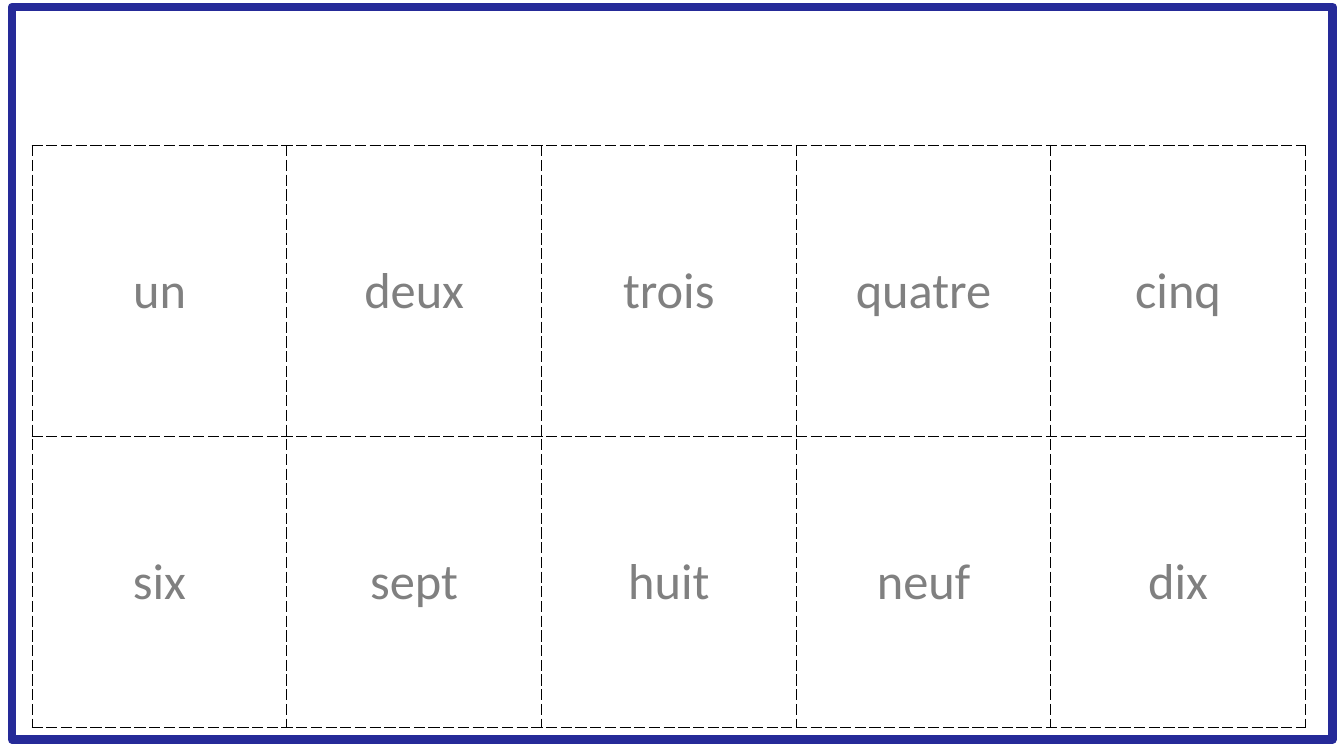
from dataclasses import dataclass

from lxml.etree import SubElement
from pptx import Presentation
from pptx.dml.color import RGBColor
from pptx.enum.shapes import MSO_SHAPE
from pptx.enum.text import MSO_ANCHOR, PP_ALIGN
from pptx.oxml.ns import qn
from pptx.util import Pt


@dataclass(frozen=True)
class Theme:
    font: str = "Calibri"
    size: float = 36
    ink: str = "808080"
    frame: str = "252A98"
    rule: str = "000000"


class Board:
    """Draws styled elements on one slide."""

    def __init__(self, slide, theme):
        self.slide = slide
        self.theme = theme

    def frame(self, left, top, width, height, weight):
        box = self.slide.shapes.add_shape(
            MSO_SHAPE.RECTANGLE, Pt(left), Pt(top), Pt(width), Pt(height))
        box.shadow.inherit = False
        box.fill.background()
        box.line.color.rgb = RGBColor.from_string(self.theme.frame)
        box.line.width = Pt(weight)

    def border(self, cell, weight):
        props = cell._tc.get_or_add_tcPr()
        for spot, side in enumerate(("a:lnL", "a:lnR", "a:lnT", "a:lnB")):
            line = SubElement(props, qn(side), w=str(Pt(weight)))
            fill = SubElement(line, qn("a:solidFill"))
            SubElement(fill, qn("a:srgbClr"), val=self.theme.rule)
            SubElement(line, qn("a:prstDash"), val="lgDash")
            props.insert(spot, line)

    def label(self, cell, text):
        cell.vertical_anchor = MSO_ANCHOR.MIDDLE
        para = cell.text_frame.paragraphs[0]
        para.alignment = PP_ALIGN.CENTER
        run = para.add_run()
        run.text = text
        run.font.name = self.theme.font
        run.font.size = Pt(self.theme.size)
        run.font.color.rgb = RGBColor.from_string(self.theme.ink)

    def table(self, rows, left, top, width, height):
        grid = self.slide.shapes.add_table(
            len(rows), len(rows[0]), Pt(left), Pt(top), Pt(width), Pt(height)).table
        grid.first_row = False
        grid.horz_banding = False
        for y, words in enumerate(rows):
            for x, word in enumerate(words):
                cell = grid.cell(y, x)
                cell.fill.background()
                self.border(cell, 1)
                self.label(cell, word)


def main():
    deck = Presentation()
    deck.slide_width, deck.slide_height = Pt(960), Pt(540)
    board = Board(deck.slides.add_slide(deck.slide_layouts[6]), Theme())
    board.frame(8.6, 5, 943.2, 523.4, 6)
    board.table([
        ["un", "deux", "trois", "quatre", "cinq"],
        ["six", "sept", "huit", "neuf", "dix"],
    ], 23, 104.2, 909.5, 415.4)
    deck.save("out.pptx")


if __name__ == "__main__":
    main()
